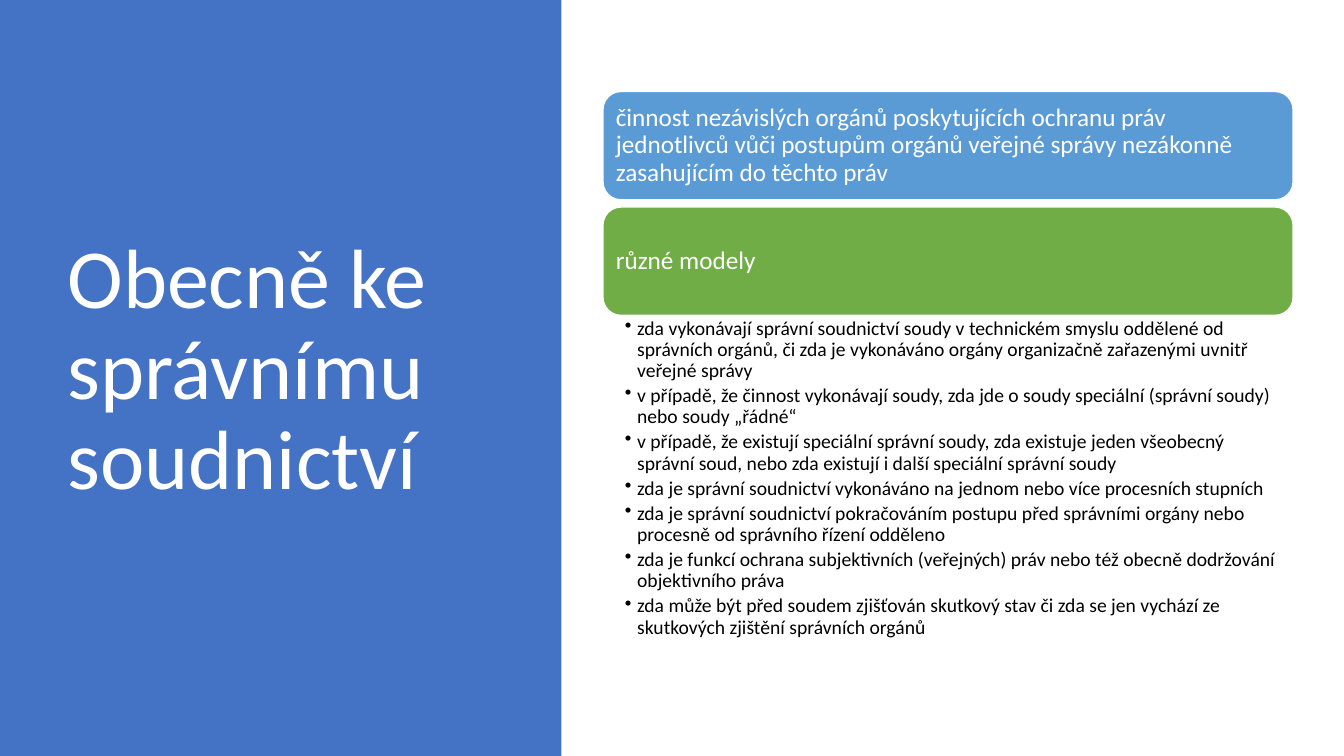
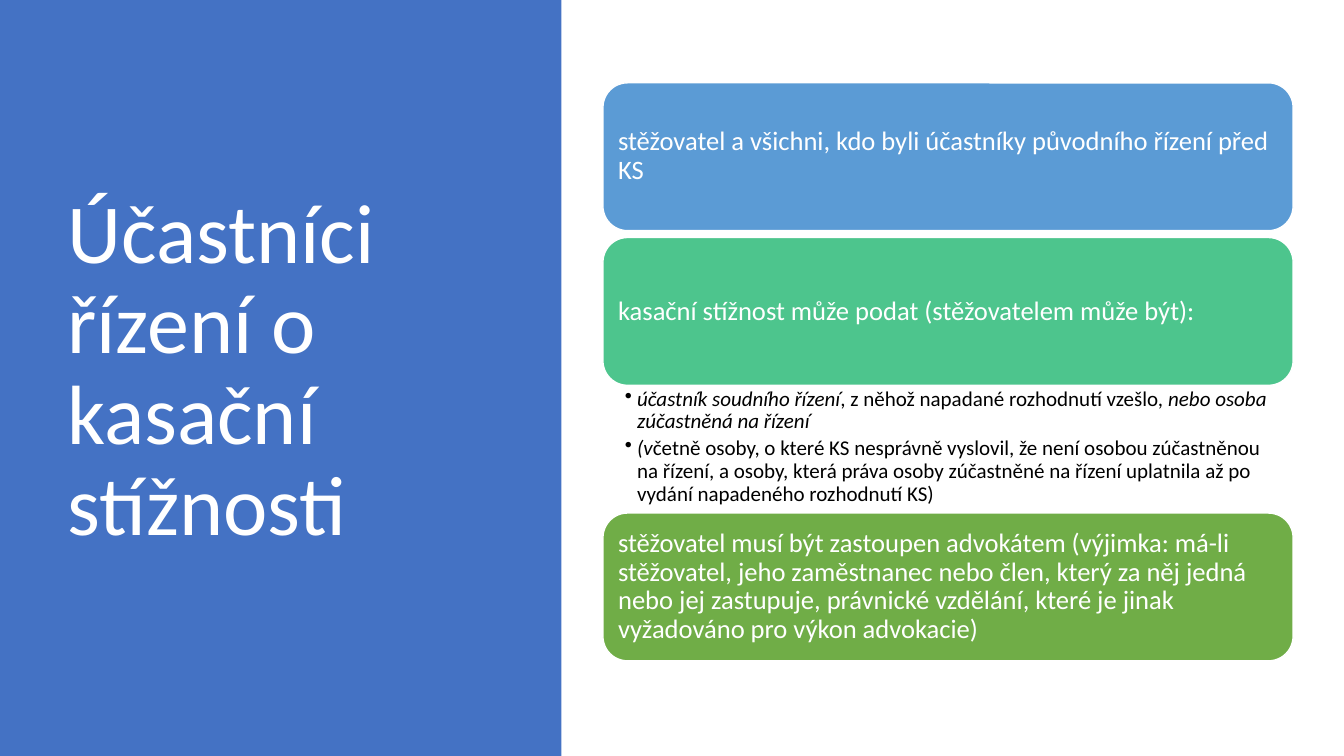
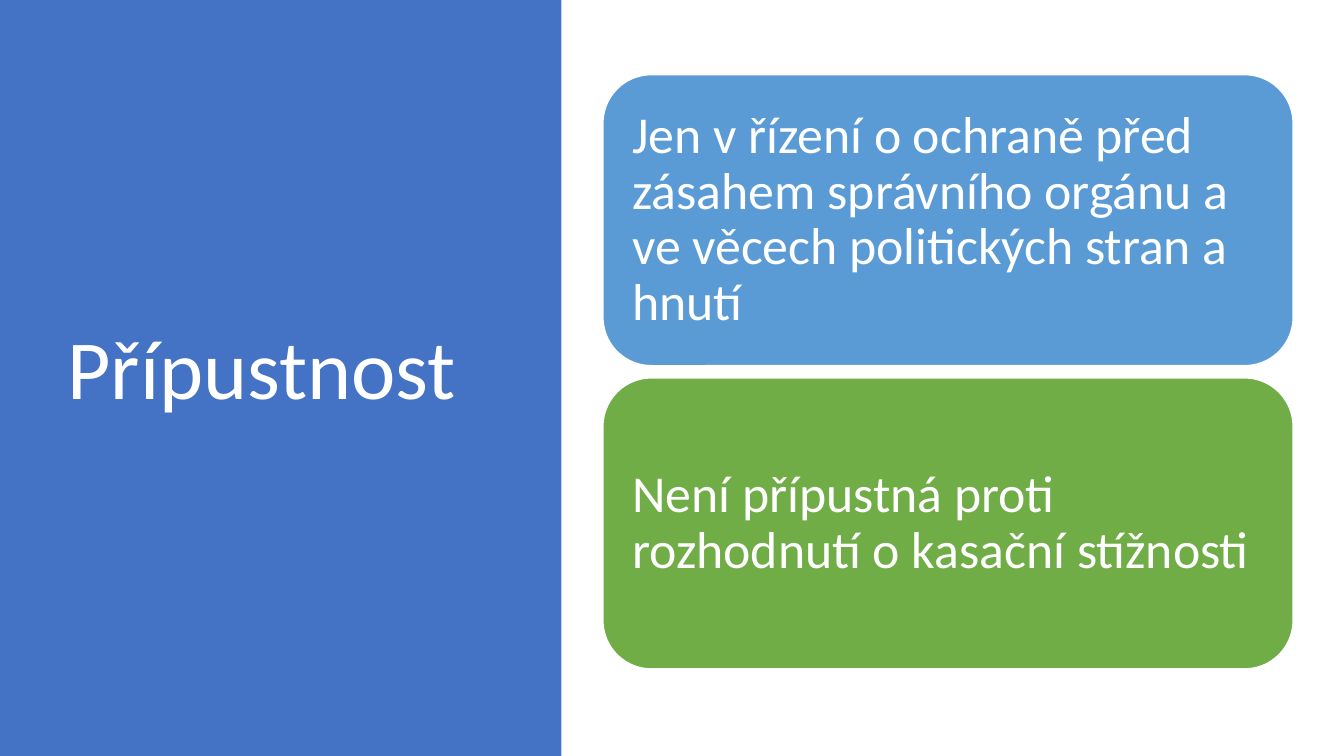
import pptx
import pptx.util
import pptx.dml.color
import pptx.enum.shapes
import pptx.enum.text
import lxml.etree
import pptx.oxml.ns

Pt = pptx.util.Pt

# Content: each slide stacks cards (text, fill) and bullet lists; *...* is italic
BLUE, GREEN, TEAL = "5B9BD5", "70AD47", "4DC58D"
SLIDES = [
    dict(title="Obecně ke správnímu soudnictví",
         card_height=77.4, gap=5.1, card_size=18, inset=5.4,
         list_height=240.6, list_size=14, stack=[
             ("činnost nezávislých orgánů poskytujících ochranu práv jednotlivců vůči postupům "
              "orgánů veřejné správy nezákonně zasahujícím do těchto práv", BLUE),
             ("různé modely", GREEN),
             ["zda vykonávají správní soudnictví soudy v technickém smyslu oddělené od správních "
              "orgánů, či zda je vykonáváno orgány organizačně zařazenými uvnitř veřejné správy",
              "v případě, že činnost vykonávají soudy, zda jde o soudy speciální (správní soudy) "
              "nebo soudy „řádné“",
              "v případě, že existují speciální správní soudy, zda existuje jeden všeobecný "
              "správní soud, nebo zda existují i další speciální správní soudy",
              "zda je správní soudnictví vykonáváno na jednom nebo více procesních stupních",
              "zda je správní soudnictví pokračováním postupu před správními orgány nebo "
              "procesně od správního řízení odděleno",
              "zda je funkcí ochrana subjektivních (veřejných) práv nebo též obecně dodržování "
              "objektivního práva",
              "zda může být před soudem zjišťován skutkový stav či zda se jen vychází ze "
              "skutkových zjištění správních orgánů"],
         ]),
    dict(title="Účastníci řízení o kasační stížnosti",
         card_height=105.6, gap=4.9, card_size=19, inset=5.7,
         list_height=91.2, list_size=15, stack=[
             ("stěžovatel a všichni, kdo byli účastníky původního řízení před KS", BLUE),
             ("kasační stížnost může podat (stěžovatelem může být):", TEAL),
             ["*účastník soudního řízení*, z něhož napadané rozhodnutí vzešlo, "
              "*nebo osoba zúčastněná na řízení*",
              "*(v*četně osoby, o které KS nesprávně vyslovil, že není osobou zúčastněnou na "
              "řízení, a osoby, která práva osoby zúčastněné na řízení uplatnila až po vydání "
              "napadeného rozhodnutí KS)"],
             ("stěžovatel musí být zastoupen advokátem (výjimka: má-li stěžovatel, jeho "
              "zaměstnanec nebo člen, který za něj jedná nebo jej zastupuje, právnické vzdělání, "
              "které je jinak vyžadováno pro výkon advokacie)", GREEN),
         ]),
    dict(title="Přípustnost",
         card_height=207.9, gap=8.7, card_size=37, inset=10.8,
         list_height=0, list_size=0, stack=[
             ("Jen v řízení o ochraně před zásahem správního orgánu a ve věcech politických "
              "stran a hnutí", BLUE),
             ("Není přípustná proti rozhodnutí o kasační stížnosti", GREEN),
         ]),
]

# Shared look
FONT, WHITE, BLACK, BAND = "Calibri", "FFFFFF", "000000", "4472C4"
BAND_WIDTH = 401
STACK_LEFT, STACK_WIDTH, STACK_MIDDLE = 430.7, 493, 265.6
LIST_INDENT = 8.8


def color(hex_text):
    return pptx.dml.color.RGBColor.from_string(hex_text)


def box(*lengths):
    return [Pt(length) for length in lengths]


def set_frame(frame, anchor, insets=None):
    frame.word_wrap = True
    frame.auto_size = pptx.enum.text.MSO_AUTO_SIZE.NONE
    frame.vertical_anchor = anchor
    if insets:
        (frame.margin_left, frame.margin_top,
         frame.margin_right, frame.margin_bottom) = box(*insets)


def style(paragraph, size, hex_text):
    paragraph.alignment = pptx.enum.text.PP_ALIGN.LEFT
    paragraph.line_spacing = 0.9
    for run in paragraph.runs:
        run.font.name = FONT
        run.font.size = Pt(size)
        run.font.color.rgb = color(hex_text)


def add_filled(slide, kind, bounds, fill):
    shape = slide.shapes.add_shape(kind, *box(*bounds))
    shape.shadow.inherit = False
    shape.fill.solid()
    shape.fill.fore_color.rgb = color(fill)
    return shape


def add_band_and_title(slide, text):
    band = add_filled(slide, pptx.enum.shapes.MSO_SHAPE.RECTANGLE,
                      (0, 0, BAND_WIDTH, 540), BAND)
    band.line.fill.background()
    title = slide.shapes.title
    title._element.addprevious(band._element)  # band lies behind the title
    title.left, title.top, title.width, title.height = box(41, 49, 299.5, 433.4)
    title.text_frame.text = text
    set_frame(title.text_frame, pptx.enum.text.MSO_ANCHOR.MIDDLE)
    style(title.text_frame.paragraphs[0], 60, WHITE)


def add_card(slide, text, fill, top, spec):
    card = add_filled(slide, pptx.enum.shapes.MSO_SHAPE.ROUNDED_RECTANGLE,
                      (STACK_LEFT, top, STACK_WIDTH, spec["card_height"]), fill)
    card.line.color.rgb = color(WHITE)
    card.line.width = Pt(1)
    card.text_frame.text = text
    set_frame(card.text_frame, pptx.enum.text.MSO_ANCHOR.MIDDLE, [spec["inset"]] * 4)
    style(card.text_frame.paragraphs[0], spec["card_size"], WHITE)


def add_list(slide, items, top, spec):
    frame = slide.shapes.add_textbox(
        *box(STACK_LEFT, top, STACK_WIDTH, spec["list_height"])).text_frame
    set_frame(frame, pptx.enum.text.MSO_ANCHOR.TOP, (15.65, 2, 10.4, 2))
    for number, item in enumerate(items):
        paragraph = frame.add_paragraph() if number else frame.paragraphs[0]
        for position, part in enumerate(item.split("*")):
            if part:
                run = paragraph.add_run()
                run.text = part
                run.font.italic = position % 2 == 1
        paragraph.level = 1
        paragraph.space_after = Pt(spec["list_size"] * 0.2)
        properties = paragraph._p.get_or_add_pPr()
        properties.set("marL", str(Pt(LIST_INDENT)))
        properties.set("indent", str(-Pt(LIST_INDENT)))
        bullet = lxml.etree.SubElement(properties, pptx.oxml.ns.qn("a:buChar"))
        bullet.set("char", "•")
        style(paragraph, spec["list_size"], BLACK)


def add_stack(slide, spec):
    # A gap separates neighbouring cards only; lists touch the cards around them
    stack = spec["stack"]
    tops, bottom = [], 0
    for number, part in enumerate(stack):
        is_list = isinstance(part, list)
        if number and not is_list and not isinstance(stack[number - 1], list):
            bottom += spec["gap"]
        tops.append(bottom)
        bottom += spec["list_height"] if is_list else spec["card_height"]
    start = STACK_MIDDLE - bottom / 2
    for part, top in zip(stack, tops):
        if isinstance(part, list):
            add_list(slide, part, start + top, spec)
        else:
            add_card(slide, *part, start + top, spec)


def main():
    deck = pptx.Presentation()
    deck.slide_width, deck.slide_height = box(960, 540)
    for spec in SLIDES:
        slide = deck.slides.add_slide(deck.slide_layouts.get_by_name("Title Only"))
        add_band_and_title(slide, spec["title"])
        add_stack(slide, spec)
    deck.save("out.pptx")


if __name__ == "__main__":
    main()
